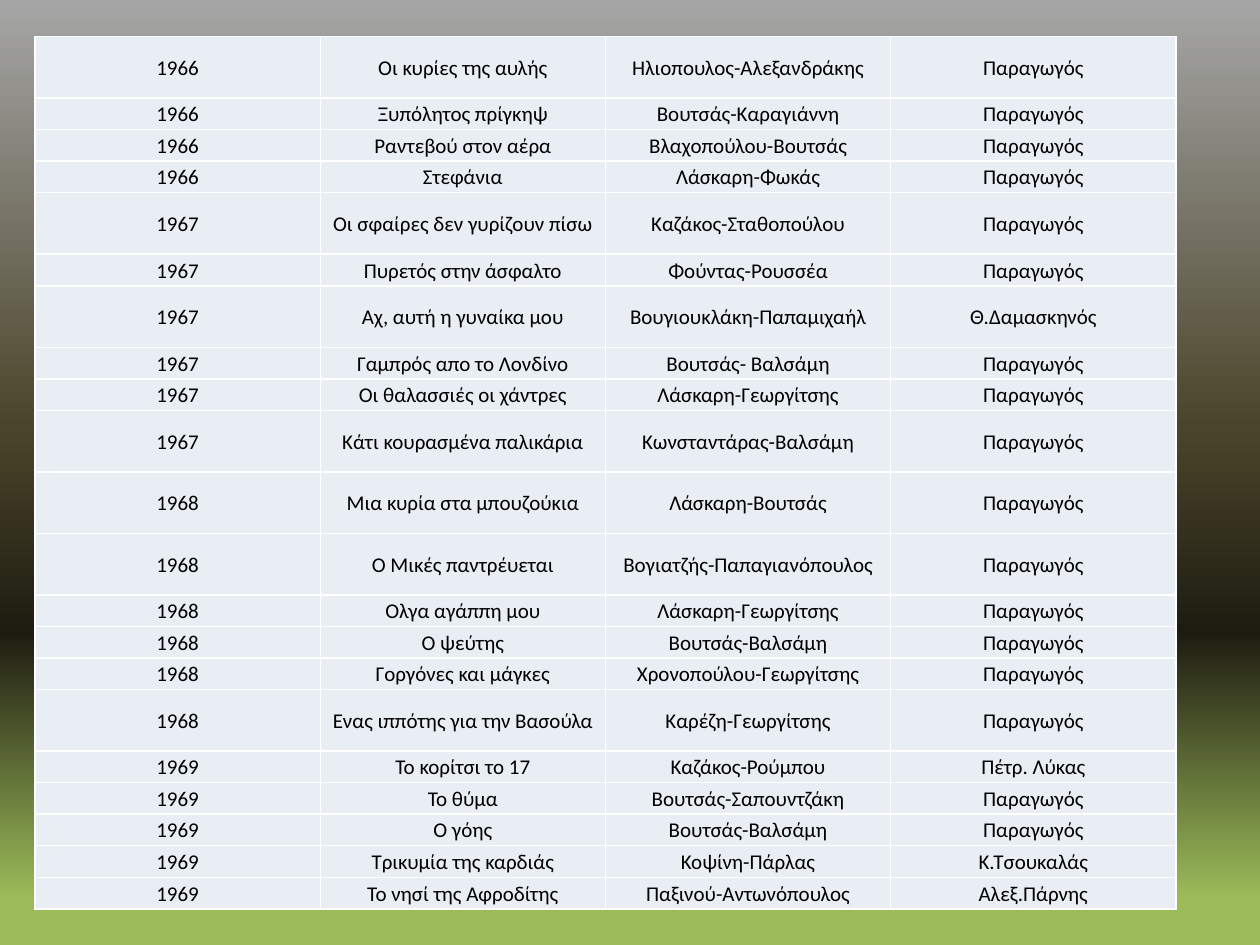
from dataclasses import dataclass

from pptx import Presentation
from pptx.dml.color import RGBColor
from pptx.enum.text import MSO_ANCHOR as Anchor, PP_ALIGN as Align
from pptx.oxml import parse_xml
from pptx.oxml.ns import nsdecls
from pptx.util import Pt

STUDIO = "Παραγωγός"
FILMS = [  # year, title, cast, producer
    ("1966", "Οι κυρίες της αυλής", "Ηλιοπουλος-Αλεξανδράκης", STUDIO),
    ("1966", "Ξυπόλητος πρίγκηψ", "Βουτσάς-Καραγιάννη", STUDIO),
    ("1966", "Ραντεβού στον αέρα", "Βλαχοπούλου-Βουτσάς", STUDIO),
    ("1966", "Στεφάνια", "Λάσκαρη-Φωκάς", STUDIO),
    ("1967", "Οι σφαίρες δεν γυρίζουν πίσω", "Καζάκος-Σταθοπούλου", STUDIO),
    ("1967", "Πυρετός στην άσφαλτο", "Φούντας-Ρουσσέα", STUDIO),
    ("1967", "Αχ, αυτή η γυναίκα μου", "Βουγιουκλάκη-Παπαμιχαήλ", "Θ.Δαμασκηνός"),
    ("1967", "Γαμπρός απο το Λονδίνο", "Βουτσάς- Βαλσάμη", STUDIO),
    ("1967", "Οι θαλασσιές οι χάντρες", "Λάσκαρη-Γεωργίτσης", STUDIO),
    ("1967", "Κάτι κουρασμένα παλικάρια", "Κωνσταντάρας-Βαλσάμη", STUDIO),
    ("1968", "Μια κυρία στα μπουζούκια", "Λάσκαρη-Βουτσάς", STUDIO),
    ("1968", "Ο Μικές παντρέυεται", "Βογιατζής-Παπαγιανόπουλος", STUDIO),
    ("1968", "Ολγα αγάππη μου", "Λάσκαρη-Γεωργίτσης", STUDIO),
    ("1968", "Ο ψεύτης", "Βουτσάς-Βαλσάμη", STUDIO),
    ("1968", "Γοργόνες και μάγκες", "Χρονοπούλου-Γεωργίτσης", STUDIO),
    ("1968", "Ενας ιππότης για την Βασούλα", "Καρέζη-Γεωργίτσης", STUDIO),
    ("1969", "Το κορίτσι το 17", "Καζάκος-Ρούμπου", "Πέτρ. Λύκας"),
    ("1969", "Το θύμα", "Βουτσάς-Σαπουντζάκη", STUDIO),
    ("1969", "Ο γόης", "Βουτσάς-Βαλσάμη", STUDIO),
    ("1969", "Τρικυμία της καρδιάς", "Κοψίνη-Πάρλας", "Κ.Τσουκαλάς"),
    ("1969", "Το νησί της Αφροδίτης", "Παξινού-Αντωνόπουλος", "Αλεξ.Πάρνης"),
]
TALL_ROWS = {0, 4, 6, 9, 10, 11, 15}

LEFT, TOP, COLUMN_WIDTH = 20, 20.9, 163
TALL, LOW = 35.15, 18.05
INSET = 0.72


@dataclass(frozen=True)
class Theme:
    font: str = "Calibri"
    size: float = 12
    line_spacing: float = 1.07
    text: str = "000000"
    cell: str = "E9EDF4"
    border: str = "FFFFFF"
    border_width: float = 1
    background: tuple = ((0, "A6A6A6"), (45, "4A452A"), (67, "1E1C11"), (95, "9BBB59"))


THEME = Theme()


def set_background(slide):
    """Fill the slide with the theme's gradient, running from top to bottom."""
    stops = "".join(
        f'<a:gs pos="{percent * 1000}"><a:srgbClr val="{color}"/></a:gs>'
        for percent, color in THEME.background
    )
    background = parse_xml(
        f'<p:bg {nsdecls("p", "a")}><p:bgPr><a:gradFill rotWithShape="1">'
        f'<a:gsLst>{stops}</a:gsLst><a:lin ang="5400000" scaled="0"/></a:gradFill>'
        "<a:effectLst/></p:bgPr></p:bg>"
    )
    slide.element.cSld.insert(0, background)


def add_borders(cell):
    properties = cell._tc.get_or_add_tcPr()
    for position, side in enumerate("LRTB"):
        line = parse_xml(
            f'<a:ln{side} {nsdecls("a")} w="{Pt(THEME.border_width)}"><a:solidFill>'
            f'<a:srgbClr val="{THEME.border}"/></a:solidFill></a:ln{side}>'
        )
        properties.insert(position, line)


def fill_cell(cell, text):
    cell.fill.solid()
    cell.fill.fore_color.rgb = RGBColor.from_string(THEME.cell)
    cell.vertical_anchor = Anchor.MIDDLE
    cell.margin_left = cell.margin_right = Pt(INSET)
    cell.margin_top = cell.margin_bottom = Pt(INSET)
    add_borders(cell)
    cell.text = text
    para = cell.text_frame.paragraphs[0]
    para.alignment = Align.CENTER
    para.line_spacing = THEME.line_spacing
    para.font.name = THEME.font
    para.font.size = Pt(THEME.size)
    para.font.color.rgb = RGBColor.from_string(THEME.text)


def add_film_table(slide):
    heights = [TALL if index in TALL_ROWS else LOW for index in range(len(FILMS))]
    columns = len(FILMS[0])
    table = slide.shapes.add_table(
        len(FILMS), columns, Pt(LEFT), Pt(TOP),
        Pt(COLUMN_WIDTH * columns), Pt(sum(heights)),
    ).table
    table.first_row = table.horz_banding = False
    for row, height, film in zip(table.rows, heights, FILMS):
        row.height = Pt(height)
        for cell, text in zip(row.cells, film):
            fill_cell(cell, text)


def main():
    deck = Presentation()
    deck.slide_width, deck.slide_height = Pt(720), Pt(540)
    slide = deck.slides.add_slide(deck.slide_layouts[6])
    set_background(slide)
    add_film_table(slide)
    deck.save("out.pptx")


if __name__ == "__main__":
    main()
